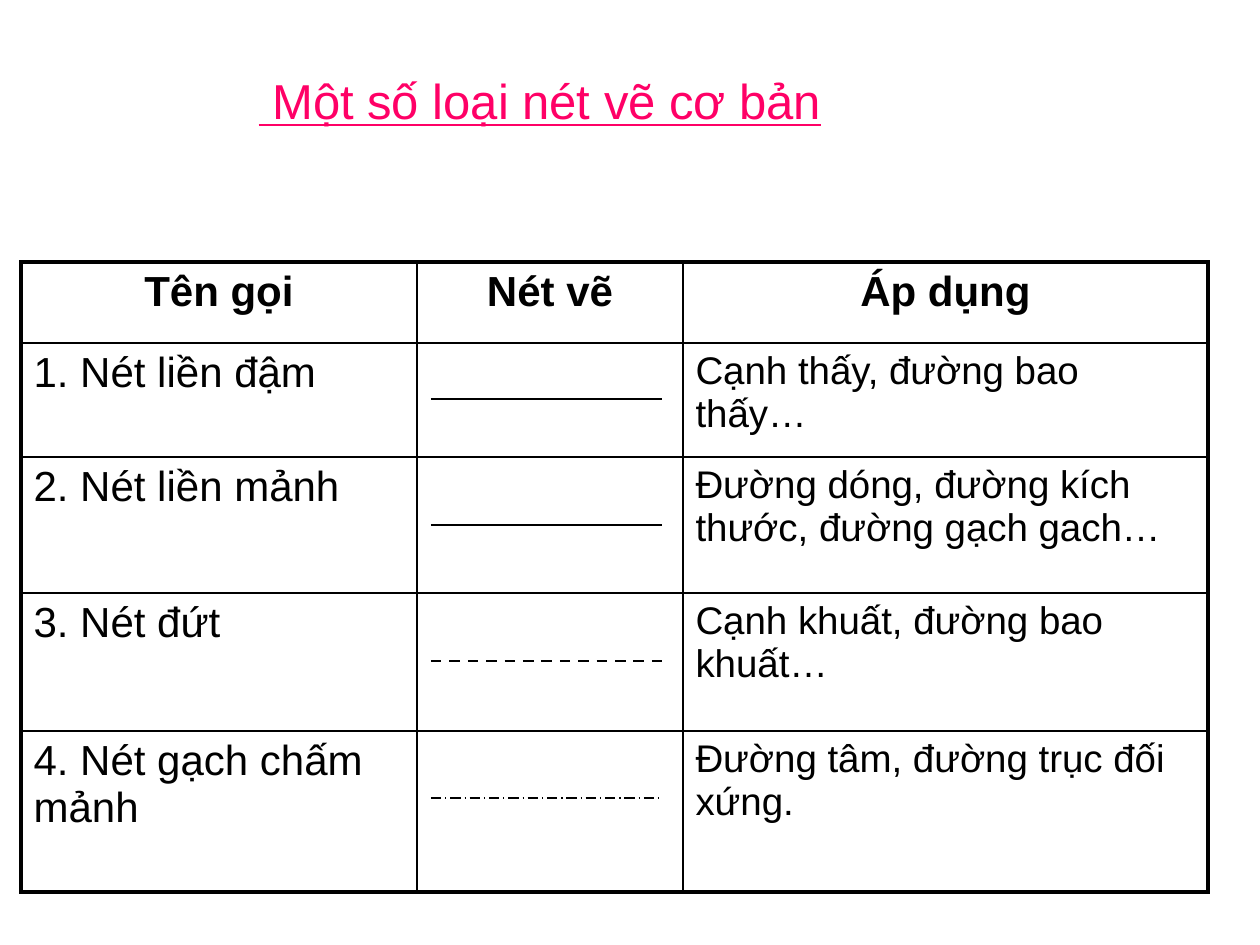
from dataclasses import dataclass

from lxml.etree import SubElement
from pptx import Presentation
from pptx.dml.color import RGBColor
from pptx.enum.dml import MSO_LINE_DASH_STYLE as Dash
from pptx.enum.shapes import MSO_CONNECTOR_TYPE as Connector
from pptx.enum.text import MSO_ANCHOR as Anchor, PP_ALIGN as Align
from pptx.oxml.ns import qn
from pptx.util import Emu, Pt


@dataclass(frozen=True)
class Theme:
    font: str = "Arial"
    ink: str = "000000"
    accent: str = "FF0066"
    title_size: int = 28
    name_size: int = 24
    use_size: int = 22
    thin_border: float = 1
    outer_border: float = 2.25
    bold_stroke: float = 1.5
    fine_stroke: float = 0.75


THEME = Theme()
TITLE = " Một số loại nét vẽ cơ bản"
HEADERS = ["Tên gọi", "Nét vẽ", "Áp dụng"]
COLUMN_WIDTHS = [396, 266, 525]
ROW_HEIGHTS = [81, 114, 136, 138, 161]
STROKE_LEFT, STROKE_RIGHT = 431, 662

# Name, use, height of the sample, stroke width, dash
LINE_TYPES = [
    ("1. Nét liền đậm", "Cạnh thấy, đường bao thấy…",
     399, THEME.bold_stroke, None),
    ("2. Nét liền mảnh", "Đường dóng, đường kích thước, đường gạch gach…",
     525, THEME.fine_stroke, None),
    ("3. Nét đứt", "Cạnh khuất, đường bao khuất…",
     661, THEME.bold_stroke, Dash.DASH),
    ("4. Nét gạch chấm mảnh", "Đường tâm, đường trục đối xứng.",
     798, THEME.fine_stroke, Dash.LONG_DASH_DOT),
]


def px(count):
    return Emu(round(count * 914400 / 126))


def write_text(text_frame, text, size, color=THEME.ink, align=Align.LEFT,
               bold=False, underline=False):
    text_frame.text = text
    paragraph = text_frame.paragraphs[0]
    paragraph.alignment = align
    for run in paragraph.runs:
        font = run.font
        font.name, font.size = THEME.font, Pt(size)
        font.bold, font.underline = bold, underline
        font.color.rgb = RGBColor.from_string(color)


def add_title(slide):
    text_frame = slide.shapes.add_textbox(px(94), px(53), px(892), px(94)).text_frame
    text_frame.word_wrap = False
    text_frame.vertical_anchor = Anchor.MIDDLE
    write_text(text_frame, TITLE, THEME.title_size, THEME.accent,
               Align.CENTER, underline=True)


def set_borders(cell, outer_sides):
    properties = cell._tc.get_or_add_tcPr()
    for side in "LRTB":
        width = THEME.outer_border if side in outer_sides else THEME.thin_border
        border = SubElement(properties, qn(f"a:ln{side}"), w=str(Pt(width)))
        fill = SubElement(border, qn("a:solidFill"))
        SubElement(fill, qn("a:srgbClr"), val=THEME.ink)


def add_line_table(slide):
    row_count, column_count = len(ROW_HEIGHTS), len(COLUMN_WIDTHS)
    table = slide.shapes.add_table(
        row_count, column_count, px(21), px(262),
        px(sum(COLUMN_WIDTHS)), px(sum(ROW_HEIGHTS))).table
    table.first_row = table.horz_banding = False
    for column, width in zip(table.columns, COLUMN_WIDTHS):
        column.width = px(width)
    for row, height in zip(table.rows, ROW_HEIGHTS):
        row.height = px(height)

    # Thick frame outside, thin rules inside
    for r in range(row_count):
        for c in range(column_count):
            outer_sides = {side for side, is_outer in (
                ("L", c == 0), ("R", c == column_count - 1),
                ("T", r == 0), ("B", r == row_count - 1)) if is_outer}
            cell = table.cell(r, c)
            set_borders(cell, outer_sides)
            cell.fill.background()

    # Wording
    for c, header in enumerate(HEADERS):
        write_text(table.cell(0, c).text_frame, header, THEME.name_size,
                   align=Align.CENTER, bold=True)
    for r, (name, use, *_) in enumerate(LINE_TYPES, start=1):
        write_text(table.cell(r, 0).text_frame, name, THEME.name_size)
        write_text(table.cell(r, 2).text_frame, use, THEME.use_size)


def add_sample(slide, y, width, dash):
    connector = slide.shapes.add_connector(
        Connector.STRAIGHT, px(STROKE_LEFT), px(y), px(STROKE_RIGHT), px(y))
    line = connector.line
    line.color.rgb = RGBColor.from_string(THEME.ink)
    line.width = Pt(width)
    if dash is not None:
        line.dash_style = dash
    SubElement(connector._element.spPr, qn("a:effectLst"))


def main():
    presentation = Presentation()
    presentation.slide_width, presentation.slide_height = px(1260), px(945)
    slide = presentation.slides.add_slide(presentation.slide_layouts[6])
    add_line_table(slide)
    add_title(slide)
    for _, _, y, width, dash in LINE_TYPES:
        add_sample(slide, y, width, dash)
    presentation.save("out.pptx")


if __name__ == "__main__":
    main()
